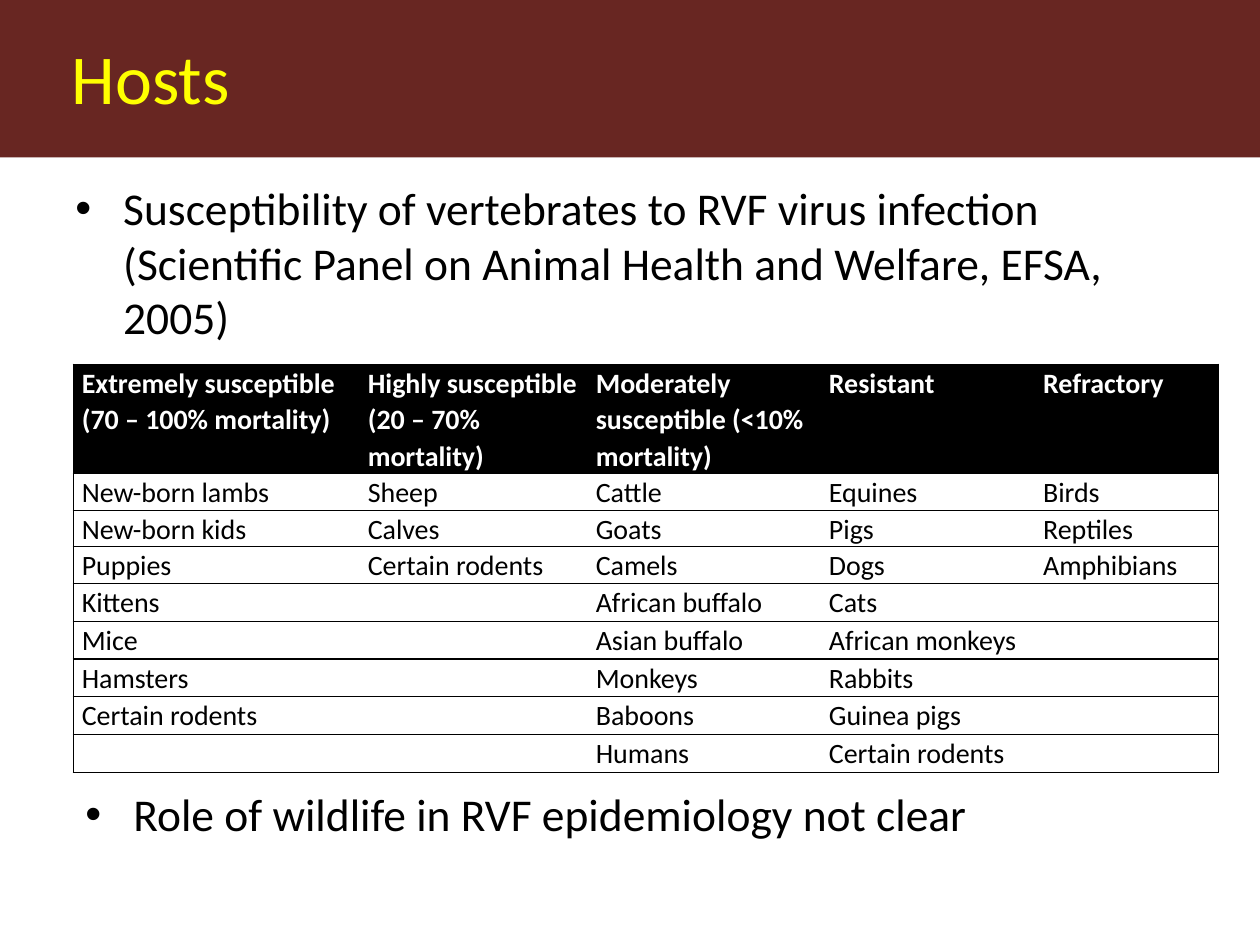
"""Build the slide on hosts of RVF virus and their susceptibility."""
import pptx
import pptx.util
import pptx.dml.color
import pptx.enum.shapes
import pptx.enum.text
import pptx.oxml.ns
from lxml import etree

Inches, Pt = pptx.util.Inches, pptx.util.Pt

THEME = {
    "font": "Calibri", "title_size": 40, "body_size": 26, "table_size": 16,
    "band": "682622", "title": "FFFF00", "ink": "000000", "paper": "FFFFFF",
}
TITLE = "Hosts"
BULLETS = [
    ("Susceptibility of vertebrates to RVF virus infection "
     "(Scientific Panel on Animal Health and Welfare, EFSA, 2005)", (0.5, 1.36, 8.37, 1.33)),
    ("Role of wildlife in RVF epidemiology not clear", (0.58, 6.17, 8.37, 0.67)),
]
COLUMNS = [
    (2.27, "Extremely susceptible\n(70 – 100% mortality)",
     ["New-born lambs", "New-born kids", "Puppies", "Kittens", "Mice", "Hamsters",
      "Certain rodents"]),
    (1.81, "Highly susceptible (20 – 70% mortality)",
     ["Sheep", "Calves", "Certain rodents"]),
    (1.85, "Moderately susceptible (<10% mortality)",
     ["Cattle", "Goats", "Camels", "African buffalo", "Asian buffalo", "Monkeys",
      "Baboons", "Humans"]),
    (1.7, "Resistant",
     ["Equines", "Pigs", "Dogs", "Cats", "African monkeys", "Rabbits", "Guinea pigs",
      "Certain rodents"]),
    (1.46, "Refractory", ["Birds", "Reptiles", "Amphibians"]),
]
TABLE_LEFT, TABLE_TOP = 0.58, 2.89
HEADER_HEIGHT, ROW_HEIGHT = 0.87, 0.29


def rgb(name):
    return pptx.dml.color.RGBColor.from_string(THEME[name])


def sub(parent, tag, **attrs):
    return etree.SubElement(parent, pptx.oxml.ns.qn(tag), attrs)


def write(tf, text, size, color="ink", bold=False, bullet=False, spacing=None,
          inset=(0.1, 0.07)):
    tf.word_wrap = True
    tf.vertical_anchor = pptx.enum.text.MSO_ANCHOR.TOP
    tf.margin_left = tf.margin_right = Inches(inset[0])
    tf.margin_top = tf.margin_bottom = Inches(inset[1])
    for i, line in enumerate(text.split("\n")):
        p = tf.add_paragraph() if i else tf.paragraphs[0]
        p.alignment = pptx.enum.text.PP_ALIGN.LEFT
        if spacing:
            p.line_spacing = spacing
        if bullet:
            pPr = p._p.get_or_add_pPr()
            pPr.set("marL", str(Inches(0.38)))
            pPr.set("indent", str(-Inches(0.38)))
            sub(pPr, "a:buFont", typeface="Arial")
            sub(pPr, "a:buChar", char="•")
        r = p.add_run()
        r.text = line
        r.font.name, r.font.size, r.font.bold = THEME["font"], Pt(THEME[size]), bold
        r.font.color.rgb = rgb(color)


def set_borders(cell, sides):
    tcPr = cell._tc.get_or_add_tcPr()
    for i, side in enumerate("LRTB"):
        ln = etree.Element(pptx.oxml.ns.qn(f"a:ln{side}"), w=str(Pt(0.75)))
        if side in sides:
            sub(sub(ln, "a:solidFill"), "a:srgbClr", val=THEME["ink"])
        else:
            sub(ln, "a:noFill")
        tcPr.insert(i, ln)


def add_host_table(s):
    count = max(len(hosts) for _, _, hosts in COLUMNS)
    width = sum(w for w, _, _ in COLUMNS)
    height = HEADER_HEIGHT + count * ROW_HEIGHT
    table = s.shapes.add_table(count + 1, len(COLUMNS), Inches(TABLE_LEFT), Inches(TABLE_TOP),
                               Inches(width), Inches(height)).table
    for i, row in enumerate(table.rows):
        row.height = Inches(ROW_HEIGHT if i else HEADER_HEIGHT)
    for c, (w, heading, hosts) in enumerate(COLUMNS):
        table.columns[c].width = Inches(w)
        outer = {0: "L", len(COLUMNS) - 1: "R"}.get(c, "")
        for i, text in enumerate([heading] + hosts + [""] * (count - len(hosts))):
            cell, header = table.cell(i, c), i == 0
            cell.fill.solid()
            cell.fill.fore_color.rgb = rgb("ink" if header else "paper")
            write(cell.text_frame, text, "table_size", color="paper" if header else "ink",
                  bold=header, spacing=1.07)
            cell.margin_left = cell.margin_right = Inches(0.07)
            cell.margin_top = cell.margin_bottom = 0
            set_borders(cell, "TB" + outer)


def main():
    prs = pptx.Presentation()
    prs.slide_width, prs.slide_height = Inches(10), Inches(7.5)
    s = prs.slides.add_slide(prs.slide_layouts[5])

    band = s.shapes.add_shape(pptx.enum.shapes.MSO_SHAPE.RECTANGLE, 0, 0,
                              prs.slide_width, Inches(1.25))
    band.shadow.inherit = False
    band.fill.solid()
    band.fill.fore_color.rgb = rgb("band")
    band.line.fill.background()
    s.shapes._spTree.insert(2, band._element)

    title = s.shapes.title
    title.left, title.top, title.width, title.height = map(Inches, (0.5, 0.2, 9, 1))
    write(title.text_frame, TITLE, "title_size", color="title", inset=(0.07, 0.07))

    for text, box in BULLETS:
        sp = s.shapes.add_textbox(*map(Inches, box))
        write(sp.text_frame, text, "body_size", bullet=True)
    add_host_table(s)
    prs.save("out.pptx")


if __name__ == "__main__":
    main()
